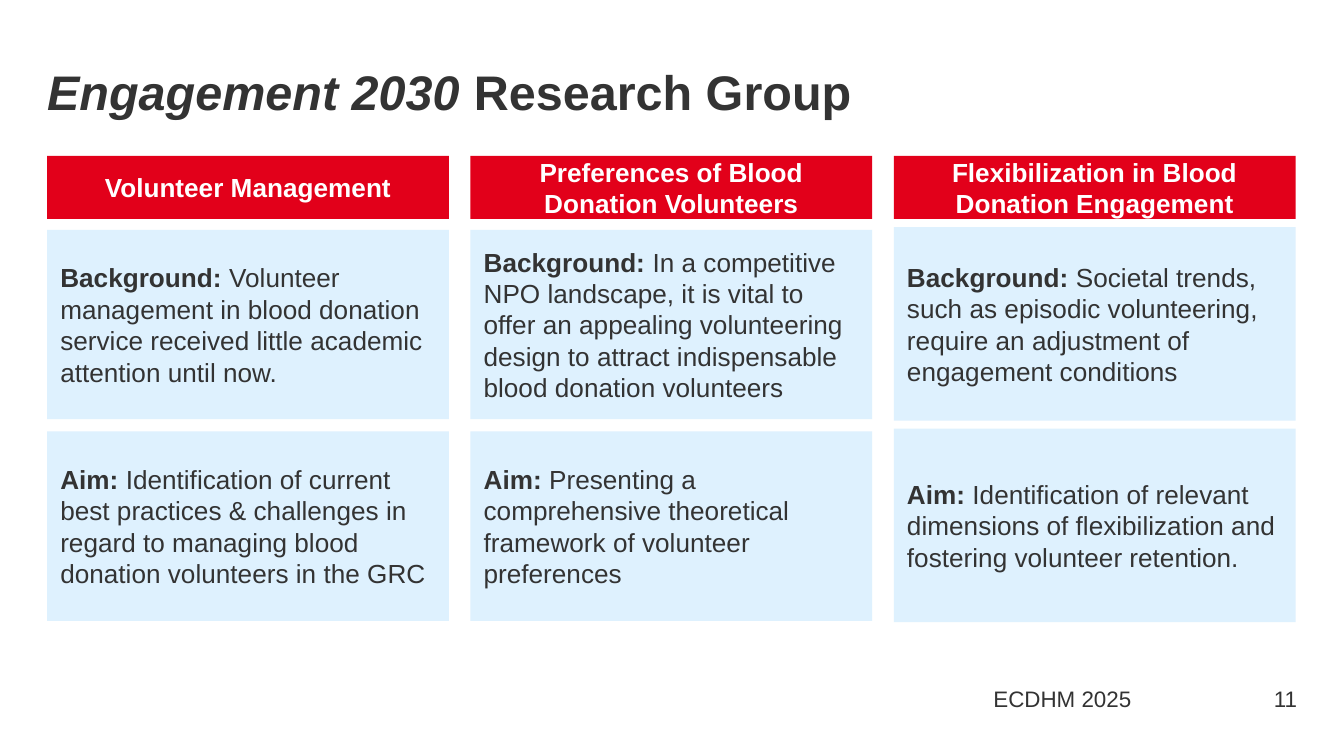
import pptx
import pptx.dml.color
import pptx.enum.shapes
import pptx.enum.text
import pptx.util

Inches = pptx.util.Inches
ALIGN = pptx.enum.text.PP_ALIGN
ANCHOR = pptx.enum.text.MSO_ANCHOR

RED, PALE, DARK, WHITE = "E2001A", "DEF1FE", "333333", "FFFFFF"

# Widescreen page, 16:9
deck = pptx.Presentation()
deck.slide_width = Inches(10)
deck.slide_height = deck.slide_width * 9 // 16
page = deck.slides.add_slide(deck.slide_layouts[6])


def rgb(value):
    return pptx.dml.color.RGBColor.from_string(value)


def add_box(left, top, width, height, spans, size, color=DARK, align=ALIGN.LEFT, fill=None):
    """Add a box of (text, bold, italic) spans; a fill makes it a rectangle."""
    place = [Inches(length) for length in (left, top, width, height)]
    if fill:
        box = page.shapes.add_shape(pptx.enum.shapes.MSO_SHAPE.RECTANGLE, *place)
        box.shadow.inherit = False
        box.fill.solid()
        box.fill.fore_color.rgb = rgb(fill)
        box.line.fill.background()
    else:
        box = page.shapes.add_textbox(*place)
    frame = box.text_frame
    frame.word_wrap = True
    frame.vertical_anchor = ANCHOR.MIDDLE
    para = frame.paragraphs[0]
    para.alignment = align
    for text, bold, italic in spans:
        span = para.add_run()
        span.text = text
        span.font.name = "Arial"
        span.font.size = pptx.util.Pt(size)
        span.font.bold = bold
        span.font.italic = italic
        span.font.color.rgb = rgb(color)
    return frame


# Title
title = add_box(0.35, 0.37, 9.29, 0.63,
                [("Engagement 2030", True, True), (" Research Group", True, False)], 26)
title.margin_left = 0
title.vertical_anchor = ANCHOR.TOP
title.paragraphs[0].line_spacing = 1.1

# Three columns: red heading, background, aim
left_edge, column_width, column_step = 0.35, 2.99, 3.15
heading_top, heading_height = 1.16, 0.47
body_top, body_height, body_step = 1.71, 1.41, 1.5
topics = [
    ("Volunteer Management",
     "Volunteer management in blood donation service received little academic "
     "attention until now.",
     "Identification of current best practices & challenges in regard to managing "
     "blood donation volunteers in the GRC"),
    ("Preferences of Blood Donation Volunteers",
     "In a competitive NPO landscape, it is vital to offer an appealing volunteering "
     "design to attract indispensable blood donation volunteers",
     "Presenting a comprehensive theoretical framework of volunteer preferences"),
    ("Flexibilization in Blood Donation Engagement",
     "Societal trends, such as episodic volunteering, require an adjustment of "
     "engagement conditions",
     "Identification of relevant dimensions of flexibilization and fostering "
     "volunteer retention."),
]
for column, (heading, background, aim) in enumerate(topics):
    left = left_edge + column * column_step
    add_box(left, heading_top, column_width, heading_height,
            [(heading, True, False)], 14, WHITE, ALIGN.CENTER, RED)
    # The last column's bodies start slightly higher and are slightly taller
    rise = 0.02 if column == 2 else 0
    for row, (label, text) in enumerate([("Background: ", background), ("Aim: ", aim)]):
        add_box(left, body_top + row * body_step - rise, column_width, body_height + 1.5 * rise,
                [(label, True, False), (text, False, False)], 14, fill=PALE)

# Footer and page number
add_box(6.88, 5.05, 2.05, 0.3, [("ECDHM 2025", False, False)], 12, align=ALIGN.CENTER)
number = add_box(8.93, 5.05, 0.72, 0.3, [("11", False, False)], 12, align=ALIGN.RIGHT)
number.margin_right = 0

deck.save("out.pptx")
